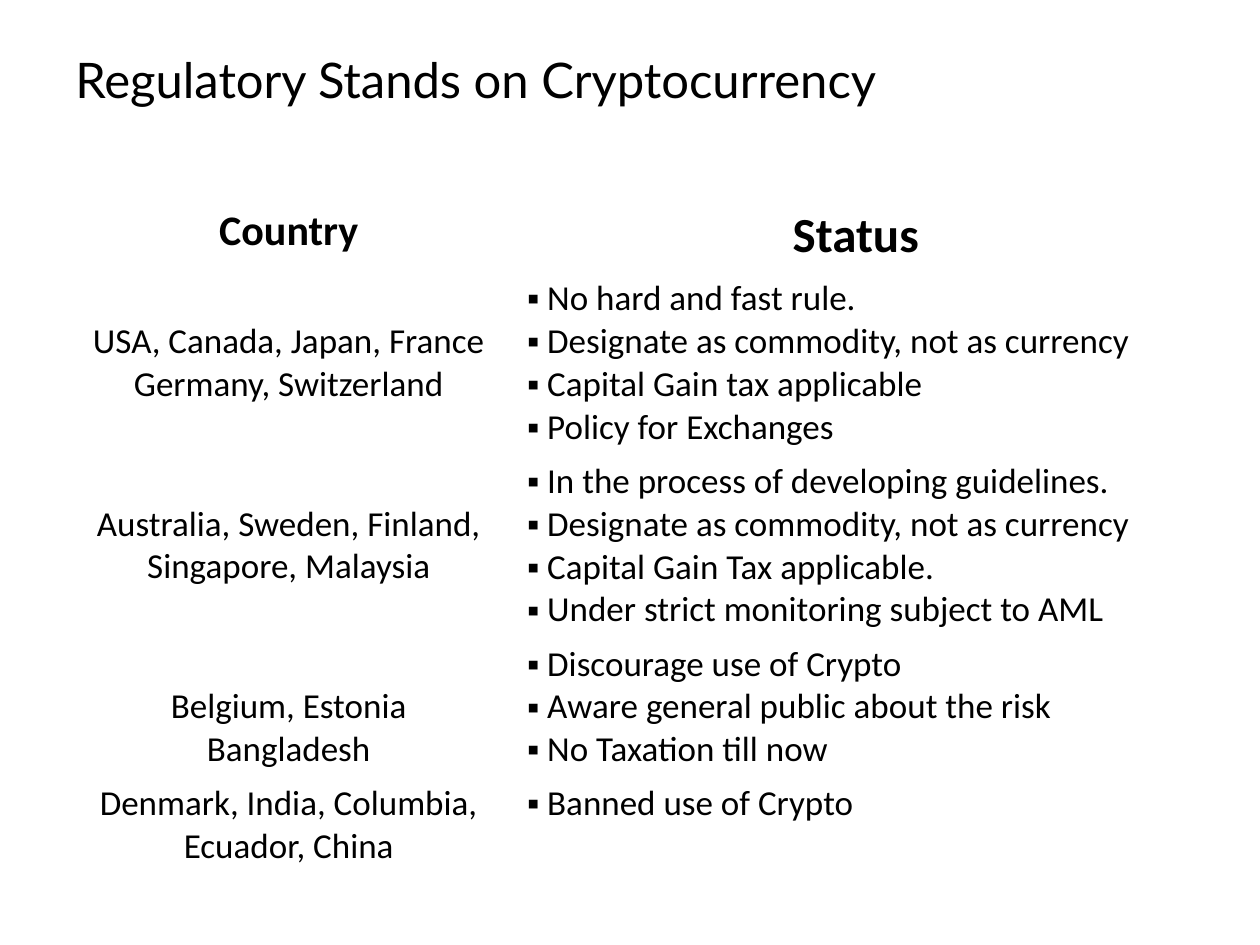
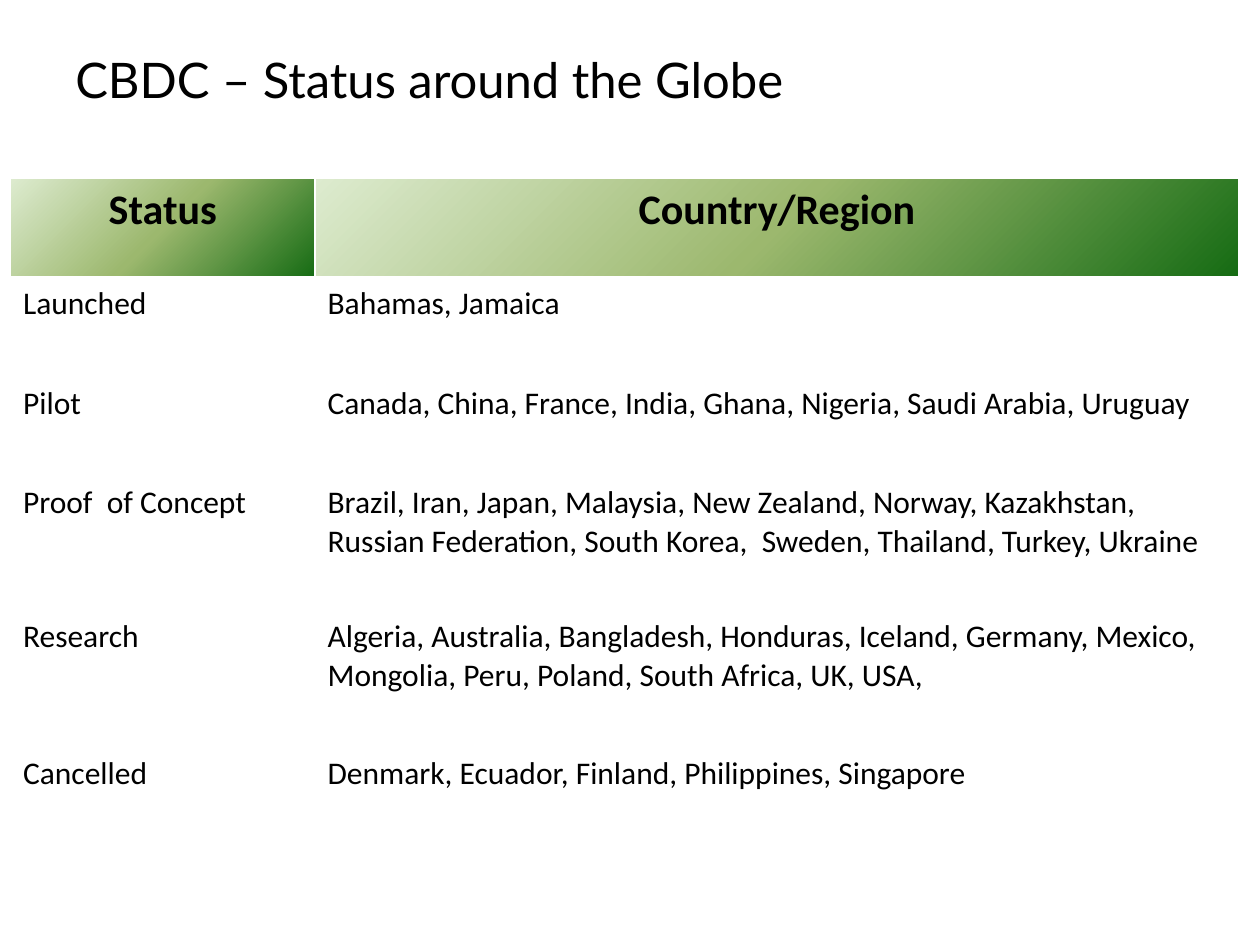
from lxml.etree import SubElement
from pptx import Presentation
from pptx.dml.color import RGBColor
from pptx.enum.text import MSO_ANCHOR, PP_ALIGN
from pptx.oxml.ns import qn
from pptx.util import Emu, Inches, Pt

BLACK = RGBColor(0x00, 0x00, 0x00)
WHITE = RGBColor(0xFF, 0xFF, 0xFF)
HEADER_GRADIENT = (
    (0, RGBColor(0xDD, 0xEB, 0xCF)),
    (50, RGBColor(0x9C, 0xB8, 0x6E)),
    (100, RGBColor(0x15, 0x6B, 0x13)),
)
TITLE_FONT, TABLE_FONT = "Lato", "Calibri"

SLIDE_WIDTH, SLIDE_HEIGHT = Inches(10), Inches(7.5)
GRID_COLUMNS = 120
UNIT = SLIDE_WIDTH / GRID_COLUMNS
LINE_HEIGHT = 1.22
CELL_MARGIN = Inches(0.05)

REGULATION = (
    (["USA, Canada, Japan, France", "Germany, Switzerland"],
     ["No hard and fast rule.", "Designate as commodity, not as currency",
      "Capital Gain tax applicable", "Policy for Exchanges"]),
    (["Australia, Sweden, Finland, Singapore, Malaysia"],
     ["In the process of developing guidelines.",
      "Designate as commodity, not as currency",
      "Capital Gain Tax applicable.",
      "Under strict monitoring subject to AML"]),
    (["Belgium, Estonia", "Bangladesh"],
     ["Discourage use of Crypto", "Aware general public about the risk",
      "No Taxation till now"]),
    (["Denmark, India, Columbia, Ecuador, China"],
     ["Banned use of Crypto"]),
)
CBDC_STATUS = (
    ("Launched", "Bahamas, Jamaica"),
    ("Pilot", "Canada, China, France, India, Ghana, Nigeria, Saudi Arabia, Uruguay"),
    ("Proof  of Concept",
     "Brazil, Iran, Japan, Malaysia, New Zealand, Norway, Kazakhstan, "
     "Russian Federation, South Korea,  Sweden, Thailand, Turkey, Ukraine"),
    ("Research",
     "Algeria, Australia, Bangladesh, Honduras, Iceland, Germany, Mexico, "
     "Mongolia, Peru, Poland, South Africa, UK, USA,"),
    ("Cancelled", "Denmark, Ecuador, Finland, Philippines, Singapore"),
)


def grid(count):
    """Length of a number of grid squares."""
    return Emu(round(count * UNIT))


def add_bullet(paragraph):
    properties = paragraph._p.get_or_add_pPr()
    indent = Inches(0.16)
    properties.set("marL", str(indent))
    properties.set("indent", str(-indent))
    SubElement(properties, qn("a:buFont"), typeface="Arial")
    SubElement(properties, qn("a:buChar"), char="▪")


def write_text(frame, lines, size=18, font=TABLE_FONT, bold=False,
               align=PP_ALIGN.LEFT, bulleted=False):
    """Fill a text frame with one paragraph for each line."""
    frame.word_wrap = True
    for index, line in enumerate(lines):
        paragraph = frame.add_paragraph() if index else frame.paragraphs[0]
        paragraph.alignment = align
        if bulleted:
            add_bullet(paragraph)
        run = paragraph.add_run()
        run.text = line
        run.font.name = font
        run.font.size = Pt(size)
        run.font.bold = bold
        run.font.color.rgb = BLACK


def add_titled_slide(presentation, title):
    slide = presentation.slides.add_slide(presentation.slide_layouts[6])
    box = slide.shapes.add_textbox(grid(6), grid(3), grid(108), grid(9))
    box.text_frame.vertical_anchor = MSO_ANCHOR.MIDDLE
    write_text(box.text_frame, [title], size=28, font=TITLE_FONT)
    return slide


def add_color(parent, color):
    SubElement(parent, qn("a:srgbClr"), val=str(color))


def set_borders(cell, bottom_width):
    properties = cell._tc.get_or_add_tcPr()
    for side, width in zip("LRTB", (1, 1, 1, bottom_width)):
        line = SubElement(properties, qn(f"a:ln{side}"), w=str(Pt(width)))
        add_color(SubElement(line, qn("a:solidFill")), WHITE)


def set_gradient(cell):
    """Diagonal green fill; the borders must already be set."""
    properties = cell._tc.get_or_add_tcPr()
    gradient = SubElement(properties, qn("a:gradFill"), rotWithShape="1")
    stops = SubElement(gradient, qn("a:gsLst"))
    for percent, color in HEADER_GRADIENT:
        add_color(SubElement(stops, qn("a:gs"), pos=str(percent * 1000)), color)
    SubElement(gradient, qn("a:lin"), ang=str(45 * 60000), scaled="0")


def add_plain_table(slide, left, top, column_widths, row_heights, gradient_header=False):
    """Add a table with white borders; all lengths are in grid squares."""
    table = slide.shapes.add_table(
        len(row_heights), len(column_widths), grid(left), grid(top),
        grid(sum(column_widths)), grid(sum(row_heights))).table
    table.first_row = table.horz_banding = False
    for column, width in zip(table.columns, column_widths):
        column.width = grid(width)
    for index, (row, height) in enumerate(zip(table.rows, row_heights)):
        row.height = grid(height)
        for cell in row.cells:
            set_borders(cell, bottom_width=1 if index else 3)
            if gradient_header and index == 0:
                set_gradient(cell)
            else:
                cell.fill.background()
    return table


def write_header(table, labels, sizes):
    for cell, label, size in zip(table.rows[0].cells, labels, sizes):
        write_text(cell.text_frame, [label], size=size, bold=True, align=PP_ALIGN.CENTER)


def build_regulation_slide(presentation):
    slide = add_titled_slide(presentation, "Regulatory Stands on Cryptocurrency")
    table = add_plain_table(slide, 6, 19, (43, 65), (6.8, 17.4, 17.4, 13.1, 9))
    write_header(table, ("Country", "Status"), (24, 28))
    size = 20
    for index, (countries, rules) in enumerate(REGULATION, start=1):
        country_cell, status_cell = table.rows[index].cells
        if len(rules) > 1:
            country_cell.margin_top = CELL_MARGIN + Pt(size * LINE_HEIGHT)
        write_text(country_cell.text_frame, countries, size=size, align=PP_ALIGN.CENTER)
        write_text(status_cell.text_frame, rules, size=size, bulleted=True)


def build_cbdc_slide(presentation):
    slide = add_titled_slide(presentation, "CBDC – Status around the Globe")
    table = add_plain_table(slide, 1, 17, (29, 88), (9.5, 9.5, 9.5, 12.75, 13, 9.5),
                            gradient_header=True)
    write_header(table, ("Status", "Country/Region"), (24, 24))
    for index, texts in enumerate(CBDC_STATUS, start=1):
        for cell, text in zip(table.rows[index].cells, texts):
            write_text(cell.text_frame, [text])


def main():
    presentation = Presentation()
    presentation.slide_width = SLIDE_WIDTH
    presentation.slide_height = SLIDE_HEIGHT
    build_regulation_slide(presentation)
    build_cbdc_slide(presentation)
    presentation.save("out.pptx")


if __name__ == "__main__":
    main()
